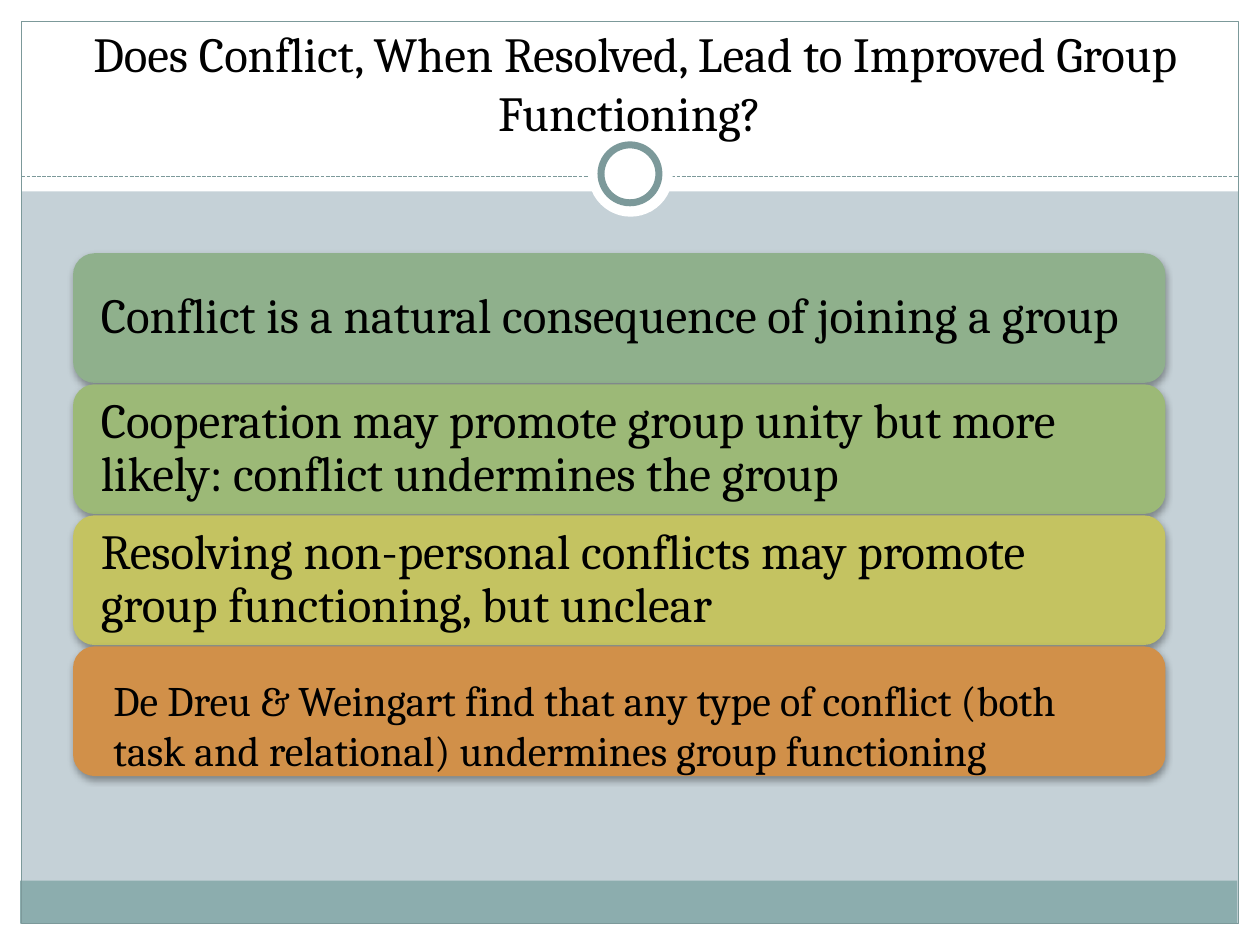
from dataclasses import dataclass

from lxml.etree import SubElement
from pptx import Presentation
from pptx.dml.color import RGBColor
from pptx.enum.dml import MSO_LINE_DASH_STYLE as Dash
from pptx.enum.shapes import MSO_CONNECTOR as Connector, MSO_SHAPE as Shape
from pptx.enum.text import MSO_ANCHOR as Anchor, PP_ALIGN as Align
from pptx.oxml.ns import qn
from pptx.util import Inches, Pt


@dataclass(frozen=True)
class Theme:
    font: str = "Cambria"
    large: int = 28
    small: int = 24
    text: str = "000000"
    background: str = "C5D1D7"
    paper: str = "FFFFFF"
    footer: str = "8CADAE"
    frame: str = "7C999A"
    shadow: str = "000000"
    bars: tuple = ("8FB08C", "9CB977", "C4C361", "D19049")


THEME = Theme()
TITLE = "Does Conflict, When Resolved, Lead to Improved Group Functioning? "
POINTS = (
    "Conflict is a natural consequence of joining a group",
    "Cooperation may promote group unity but more likely: conflict undermines the group",
    "Resolving non-personal conflicts may promote group functioning, but unclear",
)
FINDING = (
    "De Dreu & Weingart find that any type of conflict "
    "(both task and relational) undermines group functioning"
)


def color(value):
    return RGBColor.from_string(value)


def add_shape(slide, kind, box, fill=None, line=None, width=0.75):
    shape = slide.shapes.add_shape(kind, *map(Inches, box))
    shape.shadow.inherit = False
    if fill:
        shape.fill.solid()
        shape.fill.fore_color.rgb = color(fill)
    else:
        shape.fill.background()
    if line:
        shape.line.color.rgb = color(line)
        shape.line.width = Pt(width)
    else:
        shape.line.fill.background()
    return shape


def add_shadow(shape):
    effects = shape._element.spPr.find(qn("a:effectLst"))
    shadow = SubElement(effects, qn("a:outerShdw"), blurRad=str(Pt(4)),
                        dist=str(Pt(2)), dir="5400000", rotWithShape="0")
    shade = SubElement(shadow, qn("a:srgbClr"), val=THEME.shadow)
    SubElement(shade, qn("a:alpha"), val="35000")


def write(shape, text, size, anchor, insets, align=Align.LEFT, spacing=1.0):
    frame = shape.text_frame
    frame.word_wrap = True
    frame.vertical_anchor = anchor
    (frame.margin_left, frame.margin_top,
     frame.margin_right, frame.margin_bottom) = map(Inches, insets)
    paragraph = frame.paragraphs[0]
    paragraph.text = text
    paragraph.alignment = align
    paragraph.line_spacing = spacing
    paragraph.font.name = THEME.font
    paragraph.font.size = Pt(size)
    paragraph.font.color.rgb = color(THEME.text)


def add_divider(slide):
    line = slide.shapes.add_connector(
        Connector.STRAIGHT, Inches(0.17), Inches(1.4), Inches(9.83), Inches(1.4))
    line.line.color.rgb = color(THEME.frame)
    line.line.width = Pt(0.75)
    line.line.dash_style = Dash.SQUARE_DOT
    SubElement(line._element.spPr, qn("a:effectLst"))


def add_frame(slide):
    margins = ((0, 7.33, 10, 0.17), (0, 0, 10, 1.52),
               (0, 0, 0.17, 7.5), (9.83, 0, 0.17, 7.5))
    for margin in margins:
        add_shape(slide, Shape.RECTANGLE, margin, THEME.paper)
    add_shape(slide, Shape.RECTANGLE, (0.16, 6.99, 9.66, 0.34), THEME.footer)
    add_shape(slide, Shape.RECTANGLE, (0.17, 0.17, 9.66, 7.16), line=THEME.frame)
    add_divider(slide)
    add_shape(slide, Shape.OVAL, (4.67, 1.05, 0.67, 0.67), THEME.paper)
    add_shape(slide, Shape.OVAL, (4.77, 1.15, 0.46, 0.46), THEME.paper, THEME.frame, 4)


def add_title(slide):
    title = slide.shapes.add_textbox(*map(Inches, (0.25, 0.25, 9.58, 0.92)))
    write(title, TITLE, THEME.large, Anchor.BOTTOM, (0.1, 0.05, 0.1, 0.05), Align.CENTER)


def add_bar(slide, index):
    box = (0.58, 2.01 + 1.04 * index, 8.67, 1.03)
    bar = add_shape(slide, Shape.ROUNDED_RECTANGLE, box, THEME.bars[index])
    add_shadow(bar)
    return bar


def main():
    presentation = Presentation()
    presentation.slide_width = Inches(10)
    presentation.slide_height = Inches(7.5)
    slide = presentation.slides.add_slide(presentation.slide_layouts[6])
    slide.background.fill.solid()
    slide.background.fill.fore_color.rgb = color(THEME.background)
    add_frame(slide)
    add_title(slide)
    for index, point in enumerate(POINTS):
        write(add_bar(slide, index), point, THEME.large, Anchor.MIDDLE,
              (0.17, 0.17, 0.17, 0.17), spacing=0.9)
    write(add_bar(slide, len(POINTS)), FINDING, THEME.small, Anchor.TOP,
          (0.27, 0.17, 0.18, 0.05))
    presentation.save("out.pptx")


if __name__ == "__main__":
    main()
